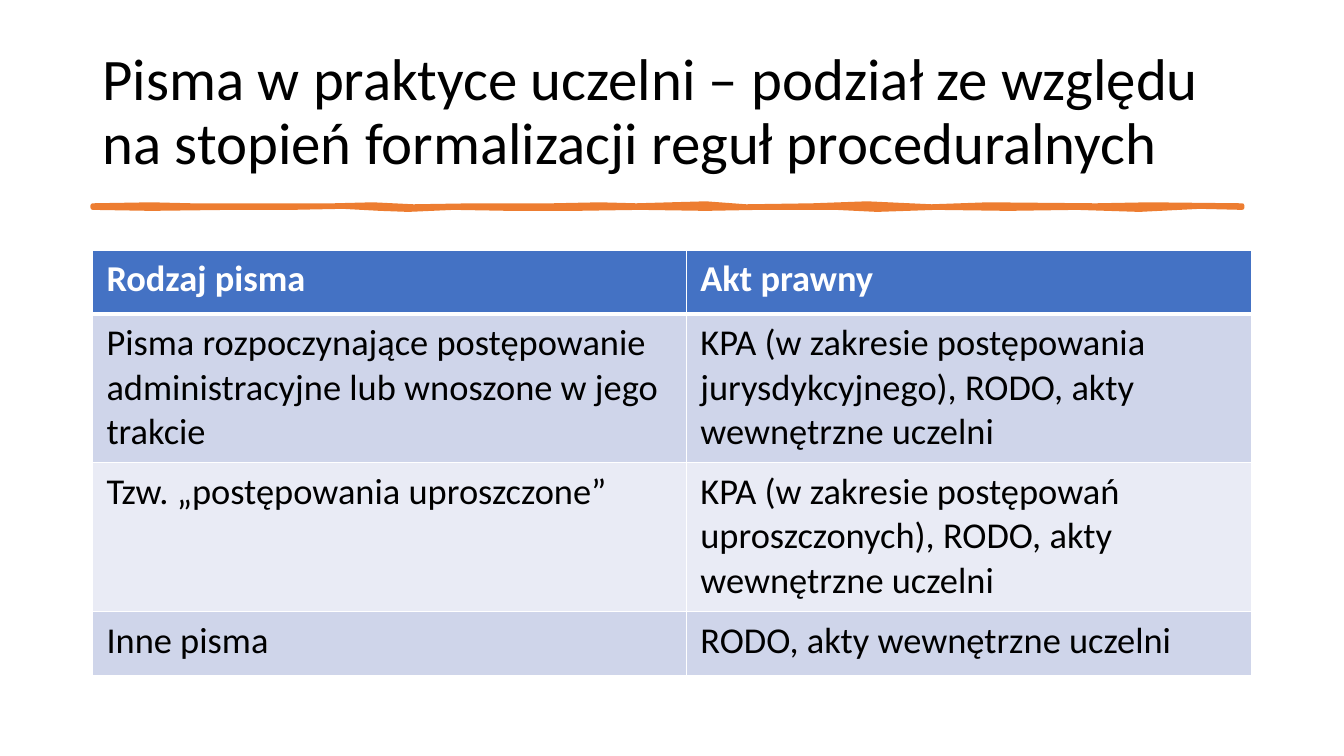
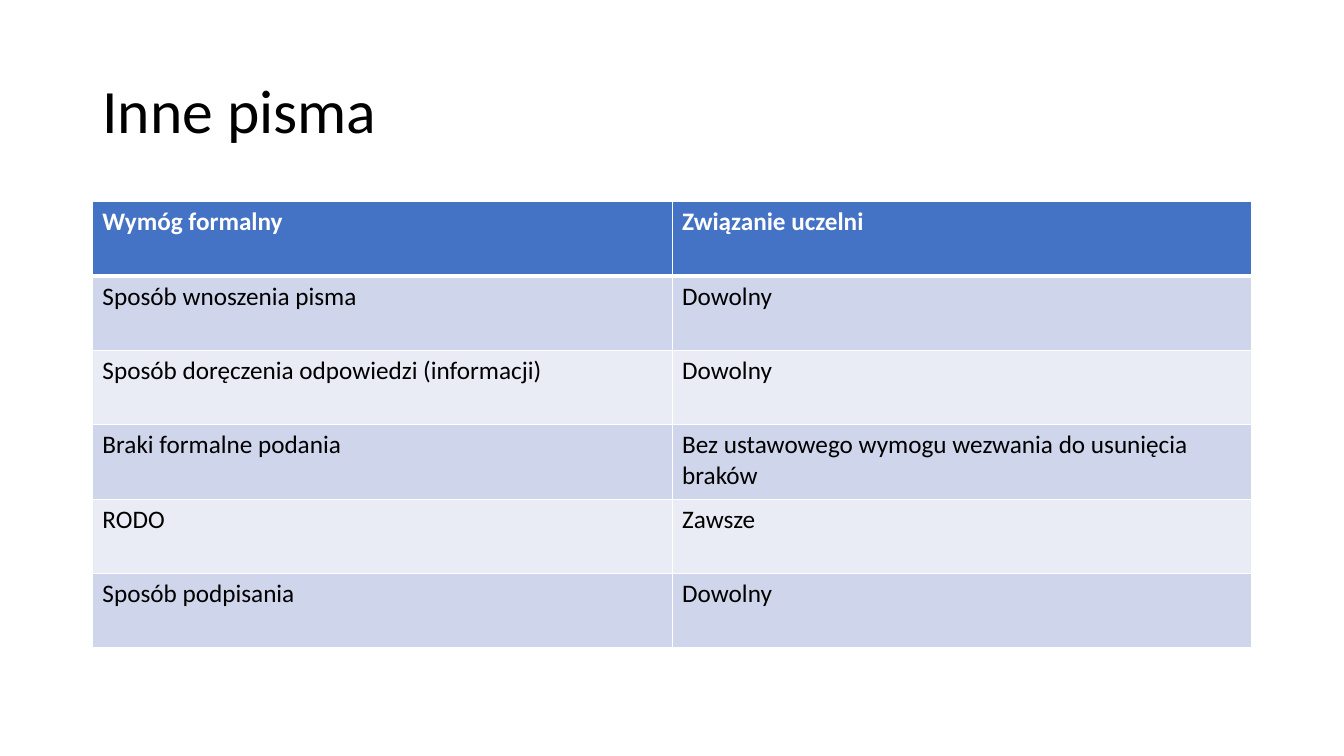
from lxml import etree
from pptx import Presentation
from pptx.dml.color import RGBColor
from pptx.enum.text import MSO_ANCHOR, MSO_AUTO_SIZE, PP_ALIGN
from pptx.oxml.ns import qn
from pptx.util import Inches, Pt

MIDDLE = MSO_ANCHOR.MIDDLE
NO_FIT = MSO_AUTO_SIZE.NONE
LEFT_ALIGN = PP_ALIGN.LEFT

WIDE, HIGH = 13.33, 7.5
LEFT, SPAN = 11 / 12, 11.5
FONT = "Calibri"
COLORS = {
    "text": "000000",
    "white": "FFFFFF",
    "head": "4472C4",
    "odd": "CFD5EA",
    "even": "E9EBF5",
    "brush": "ED7D31",
}

KINDS = [
    ["Rodzaj pisma", "Akt prawny"],
    ["Pisma rozpoczynające postępowanie administracyjne lub wnoszone w jego trakcie",
     "KPA (w zakresie postępowania jurysdykcyjnego), RODO, akty wewnętrzne uczelni"],
    ["Tzw. „postępowania uproszczone”",
     "KPA (w zakresie postępowań uproszczonych), RODO, akty wewnętrzne uczelni"],
    ["Inne pisma", "RODO, akty wewnętrzne uczelni"],
]
RULES = [
    ["Wymóg formalny", "Związanie uczelni"],
    ["Sposób wnoszenia pisma", "Dowolny"],
    ["Sposób doręczenia odpowiedzi (informacji)", "Dowolny"],
    ["Braki formalne podania", "Bez ustawowego wymogu wezwania do usunięcia braków"],
    ["RODO", "Zawsze"],
    ["Sposób podpisania", "Dowolny"],
]
TOP_EDGE = [(0.92, 2.04), (1.5, 2.03), (1.9, 2.04), (2.44, 2.04), (3.31, 2.04),
            (3.7, 2.03), (4.1, 2.05), (4.7, 2.04), (5.48, 2.04), (5.95, 2.03),
            (6.31, 2.04), (7.0, 2.02), (7.4, 2.05), (8.06, 2.04), (8.6, 2.02),
            (9.24, 2.05), (9.8, 2.03), (10.87, 2.04), (11.4, 2.03), (12.32, 2.04)]
LOW_EDGE = [(12.32, 2.06), (11.9, 2.05), (11.3, 2.08), (10.68, 2.06), (10.0, 2.07),
            (9.28, 2.06), (8.7, 2.08), (8.29, 2.06), (7.53, 2.06), (7.0, 2.07),
            (6.35, 2.06), (5.7, 2.07), (5.06, 2.07), (4.5, 2.06), (4.05, 2.08),
            (3.77, 2.07), (3.4, 2.05), (2.89, 2.06), (2.28, 2.06), (1.5, 2.07),
            (0.92, 2.06)]


def tint(name):
    return RGBColor.from_string(COLORS[name])


def style(par, size, color, bold=False):
    for run in par.runs:
        font = run.font
        font.name, font.size, font.bold = FONT, Pt(size), bold
        font.color.rgb = tint(color)


def add_page(deck, text, size):
    page = deck.slides.add_slide(deck.slide_layouts[5])
    title = page.shapes.title
    title.left, title.top = Inches(LEFT), Inches(0.4)
    title.width, title.height = Inches(SPAN), Inches(1.45)
    frame = title.text_frame
    frame.text = text
    frame.word_wrap, frame.auto_size = True, NO_FIT
    frame.vertical_anchor = MIDDLE
    par = frame.paragraphs[0]
    par.alignment, par.line_spacing = LEFT_ALIGN, 0.9
    style(par, size, "text")
    return page


def add_brush(page):
    path = [(Inches(x), Inches(y)) for x, y in TOP_EDGE + LOW_EDGE]
    pen = page.shapes.build_freeform(*path[0])
    pen.add_line_segments(path[1:], close=True)
    brush = pen.convert_to_shape()
    brush.shadow.inherit = False
    brush.fill.solid()
    brush.fill.fore_color.rgb = tint("brush")
    brush.line.color.rgb = tint("brush")
    brush.line.width = Pt(3.25)


def add_edges(cell, **widths):
    props = cell._tc.get_or_add_tcPr()
    for side in "LRTB":
        line = etree.SubElement(props, qn(f"a:ln{side}"), w=str(Pt(widths.get(side, 1))))
        fill = etree.SubElement(line, qn("a:solidFill"))
        etree.SubElement(fill, qn("a:srgbClr"), val=COLORS["white"])


def fill_cell(cell, text, row, size, pad):
    cell.text = text
    cell.margin_left = cell.margin_right = Inches(pad)
    cell.margin_top = cell.margin_bottom = Inches(pad / 2)
    add_edges(cell, T=3 if row == 1 else 1, B=3 if row == 0 else 1)
    head = row == 0
    cell.fill.solid()
    cell.fill.fore_color.rgb = tint("head" if head else "odd" if row % 2 else "even")
    style(cell.text_frame.paragraphs[0], size, "white" if head else "text", head)


def add_grid(page, data, top, high, cols, rows, size, pad):
    box = (Inches(LEFT), Inches(top), Inches(SPAN), Inches(high))
    grid = page.shapes.add_table(len(rows), len(cols), *box).table
    for col, share in zip(grid.columns, cols):
        col.width = Inches(SPAN * share / sum(cols))
    for row, share in zip(grid.rows, rows):
        row.height = Inches(high * share / sum(rows))
    for r, texts in enumerate(data):
        for c, text in enumerate(texts):
            fill_cell(grid.cell(r, c), text, r, size, pad)


def main():
    deck = Presentation()
    deck.slide_width, deck.slide_height = Inches(WIDE), Inches(HIGH)

    page = add_page(deck, "Pisma w praktyce uczelni – podział ze względu "
                    "na stopień formalizacji reguł proceduralnych", 42)
    add_brush(page)
    add_grid(page, KINDS, 2.48, 4.22, [105, 100], [3, 7, 7, 3], 26, 0.14)

    page = add_page(deck, "Inne pisma", 44)
    add_grid(page, RULES, 2, 4.43, [1, 1], [1] * len(RULES), 18, 0.1)

    deck.save("out.pptx")


if __name__ == "__main__":
    main()
